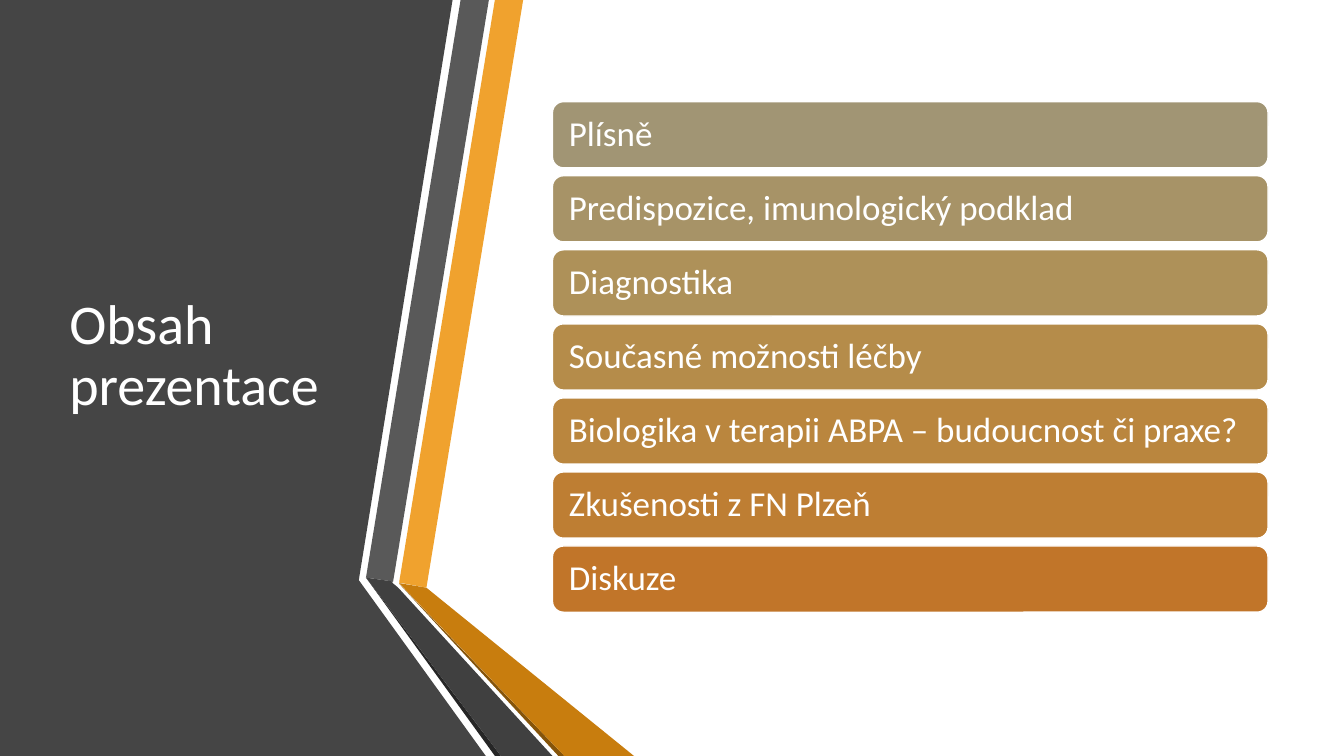
"""Build the contents slide: a folded ribbon, a title and a stack of topic bars."""
from pptx import Presentation
from pptx import util as u
from pptx.dml.color import RGBColor
from pptx.enum import shapes, text

TITLE = "Obsah prezentace"
TOPICS = [
    ("Plísně", "A19574"),
    ("Predispozice, imunologický podklad", "A79367"),
    ("Diagnostika", "AE9159"),
    ("Současné možnosti léčby", "B58C4A"),
    ("Biologika v terapii ABPA – budoucnost či praxe?", "BA863E"),
    ("Zkušenosti z FN Plzeň", "BE7E33"),
    ("Diskuze", "C17529"),
]
THEME = {
    "font": "Calibri", "title_size": 40, "topic_size": 25, "white": "FFFFFF",
    "panel": "454545", "amber": "F0A22E", "grey": "595959", "black": "262626",
    "brown": "85540A", "ochre": "C87D0E", "charcoal": "404040",
}
SLIDE_WIDTH, SLIDE_HEIGHT = 960, 540
RIBBONS = [
    ("panel", [(0, 0), (323.3, 0), (256.3, 414.4), (347, 540), (0, 540)]),
    ("amber", [(285.1, 416.2), (304.6, 419.8), (373.7, 0), (353.5, 0)]),
    ("grey", [(349.2, 0), (329, 0), (261.4, 412.6), (280.8, 415.4)]),
    ("black", [(261.4, 412.6), (353.5, 540), (357.8, 540)]),
    ("brown", [(285.1, 416.9), (398.9, 540), (403.2, 540)]),
    ("ochre", [(285.1, 416.5), (403.2, 540), (452.9, 540), (304.6, 419.8)]),
    ("charcoal", [(394.6, 540), (284.4, 419.8), (280.1, 416.2), (280.8, 415.4),
                  (261.4, 412.6), (357.8, 540)]),
]
TITLE_AREA = (42.5, 54, 218.9, 401.8)
BAR_LEFT, BAR_TOP, BAR_WIDTH, BAR_HEIGHT, BAR_PITCH = 394.6, 72.6, 511.2, 47.3, 52.9


def color(value):
    return RGBColor.from_string(value)


def fill_shape(shape, value):
    shape.shadow.inherit = False
    shape.fill.solid()
    shape.fill.fore_color.rgb = color(value)


def write(box, wording, *, size, inset_x, inset_y):
    frame = box.text_frame
    frame.word_wrap = True
    frame.vertical_anchor = text.MSO_ANCHOR.MIDDLE
    frame.margin_left = frame.margin_right = u.Pt(inset_x)
    frame.margin_top = frame.margin_bottom = u.Pt(inset_y)
    para = frame.paragraphs[0]
    para.alignment = text.PP_ALIGN.LEFT
    para.line_spacing = 0.9
    span = para.add_run()
    span.text = wording
    span.font.name = THEME["font"]
    span.font.size = u.Pt(size)
    span.font.color.rgb = color(THEME["white"])


def draw_ribbon(page, name, points):
    corners = [(u.Pt(x), u.Pt(y)) for x, y in points]
    builder = page.shapes.build_freeform(*corners[0])
    builder.add_line_segments(corners[1:], close=True)
    ribbon = builder.convert_to_shape()
    fill_shape(ribbon, THEME[name])
    ribbon.line.fill.background()


def draw_topic(page, index, wording, fill):
    area = (BAR_LEFT, BAR_TOP + index * BAR_PITCH, BAR_WIDTH, BAR_HEIGHT)
    bar = page.shapes.add_shape(shapes.MSO_SHAPE.ROUNDED_RECTANGLE, *map(u.Pt, area))
    fill_shape(bar, fill)
    bar.line.color.rgb = color(THEME["white"])
    bar.line.width = u.Pt(1)
    write(bar, wording, size=THEME["topic_size"], inset_x=9.5, inset_y=7)


def main():
    deck = Presentation()
    deck.slide_width, deck.slide_height = u.Pt(SLIDE_WIDTH), u.Pt(SLIDE_HEIGHT)
    page = deck.slides.add_slide(deck.slide_layouts[6])
    for name, points in RIBBONS:
        draw_ribbon(page, name, points)
    title = page.shapes.add_textbox(*map(u.Pt, TITLE_AREA))
    write(title, TITLE, size=THEME["title_size"], inset_x=7.2, inset_y=3.6)
    for index, (wording, fill) in enumerate(TOPICS):
        draw_topic(page, index, wording, fill)
    deck.save("out.pptx")


if __name__ == "__main__":
    main()
